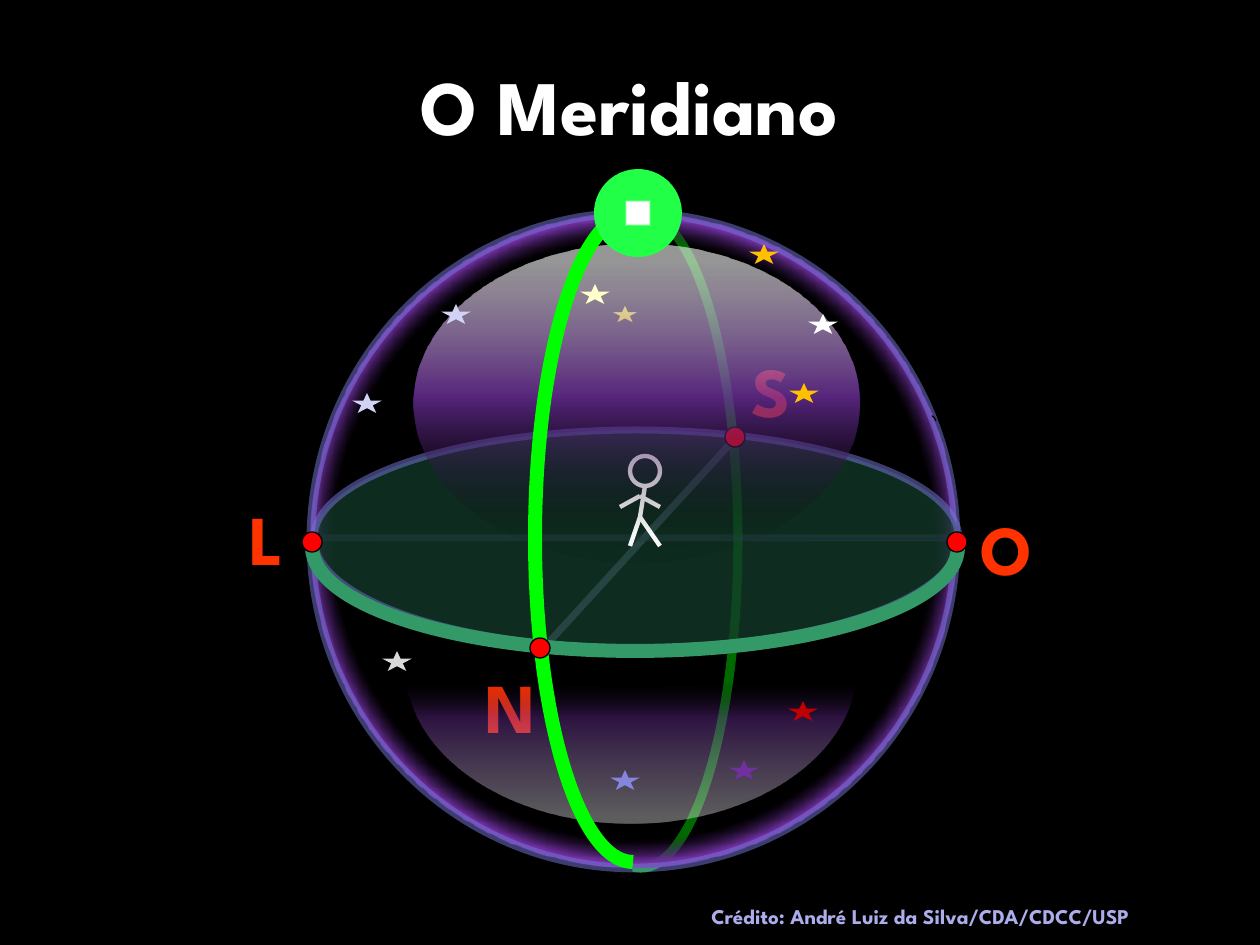
import copy
import math

import pptx
import pptx.dml.color
import pptx.enum.shapes
import pptx.enum.text
import pptx.oxml
import pptx.oxml.ns
import pptx.util

SHAPE = pptx.enum.shapes.MSO_SHAPE
qn = pptx.oxml.ns.qn
FONT = "League Spartan"
C = {"black": "000000", "white": "FFFFFF", "purple": "7030A0", "violet": "7878DE",
     "axis": "A5A5E9", "lime": "00FF00", "zenith": "21FF46", "ground": "143C2B",
     "horizon": "339966", "letter": "FF3300", "dot": "FF0000", "yellow": "FFFF00",
     "lilac": "D2D2F4", "gold": "FFC000", "cream": "FFFFCC", "crimson": "C00000",
     "blue": "8585E0", "gray": "D9D9D9", "credit": "ADADEB"}

TITLE = "O Meridiano"
CREDIT = "Crédito: André Luiz da Silva/CDA/CDCC/USP"
# letter, its corner, corner of its dot
CARDINALS = [("N", (473, 657), (530, 638)), ("L", (237, 489), (302, 532)),
             ("S", (739, 341), (725, 427)), ("O", (968, 499), (947, 532))]
LIMBS = [(645, 486, 640, 517), (640, 517, 660, 546), (640, 517, 630, 546),
         (640, 496, 660, 507), (620, 507, 640, 496)]
STARS = [(352, 393, "lilac"), (441, 304, "lilac"), (789, 383, "gold"),
         (749, 244, "gold"), (808, 314, "white"), (580, 284, "cream"),
         (729, 760, "purple"), (788, 701, "crimson"), (610, 770, "blue"),
         (382, 651, "gray")]
# Bezier outlines: start, then two handles and an end for each segment
GROUND = [(959, 538), (958, 478), (813, 430), (636, 430),
          (457, 430), (314, 479), (314, 538), (314, 599), (457, 648), (636, 648),
          (814, 648), (959, 599), (959, 539)]
FRONT_HORIZON = [(315, 536), (314, 539), (312, 543), (312, 547),
                 (312, 605), (457, 651), (635, 651), (813, 651), (958, 605), (958, 547),
                 (958, 546), (958, 544), (958, 543)]
FRONT_MERIDIAN = [(645, 214), (641, 213), (638, 213), (634, 213),
                  (580, 213), (536, 358), (536, 538), (536, 717), (580, 862), (634, 862)]
SMALL_ARC = [(936, 421), (935, 418), (934, 417), (932, 416)]
# gradient stops: position, colour, opacity
SPHERE_GLOW = [(65, "black", 40), (70, "purple", 100)]
UPPER_GLOW = [(6, "white", 58), (48, "purple", 77), (91, "black", 2)]
LOWER_GLOW = [(3, "white", 37), (68, "purple", 41), (94, "black", 0)]
ZENITH_GLOW = [(18, "white", 100), (21, "zenith", 100), (82, "zenith", 2)]


def px(n):
    return round(n * 914400 / 126)


def rgb(name):
    return pptx.dml.color.RGBColor.from_string(C[name])


def set_opacity(parent, percent):
    """Make the solid colour held by a fill's parent element translucent."""
    if percent < 100:
        color = parent.find(qn("a:solidFill"))[0]
        color.append(pptx.oxml.parse_xml(
            f'<a:alpha {pptx.oxml.ns.nsdecls("a")} val="{percent * 1000}"/>'))


def stroke(item, color, width, opacity=100):
    item.line.color.rgb = rgb(color)
    item.line.width = pptx.util.Pt(width)
    set_opacity(item.element.spPr.find(qn("a:ln")), opacity)


def style(shape, fill=None, line=None, opacity=100):
    shape.shadow.inherit = False
    if fill:
        shape.fill.solid()
        shape.fill.fore_color.rgb = rgb(fill)
        set_opacity(shape.element.spPr, opacity)
    else:
        shape.fill.background()
    if line:
        stroke(shape, *line)
    else:
        shape.line.fill.background()
    return shape


def add(kind, box, fill=None, line=None):
    return style(slide.shapes.add_shape(kind, *map(px, box)), fill, line)


def add_line(ends, *line):
    connector = slide.shapes.add_connector(
        pptx.enum.shapes.MSO_CONNECTOR.STRAIGHT, *map(px, ends))
    stroke(connector, *line)
    connector.element.spPr.append(pptx.oxml.parse_xml(
        f'<a:effectLst {pptx.oxml.ns.nsdecls("a")}/>'))


def turn(point, pivot, degrees):
    angle = math.radians(degrees)
    dx, dy = point[0] - pivot[0], point[1] - pivot[1]
    return (pivot[0] + dx * math.cos(angle) - dy * math.sin(angle),
            pivot[1] + dx * math.sin(angle) + dy * math.cos(angle))


def add_curve(outline, hub, line, fill=None, opacity=100, pivot=(0, 0), rotation=0):
    """Stroke a Bezier outline, and fill the sector it spans around its hub."""
    points = [tuple(map(px, turn(p, pivot, -rotation))) for p in [*outline, hub]]
    builder = slide.shapes.build_freeform(*points[0])
    builder.add_line_segments(points[1:], close=False)
    shape = style(builder.convert_to_shape(), fill, line, opacity)
    shape.rotation = rotation
    sector = next(shape.element.iter(qn("a:path")))
    steps = sector.findall(qn("a:lnTo"))[:-1]
    for first in range(0, len(steps), 3):
        bend = sector.makeelement(qn("a:cubicBezTo"), {})
        steps[first].addprevious(bend)
        for step in steps[first:first + 3]:
            bend.append(step[0])
            sector.remove(step)
    rim = copy.deepcopy(sector)
    rim.remove(rim[-1])
    rim.set("fill", "none")
    sector.addprevious(rim)
    sector.set("stroke", "0")
    sector.append(sector.makeelement(qn("a:close"), {}))


def set_gradient(shape, stops, shade, rotates=1):
    marks = "".join(
        f'<a:gs pos="{pos * 1000}"><a:srgbClr val="{C[color]}">'
        f'<a:alpha val="{opacity * 1000}"/></a:srgbClr></a:gs>'
        for pos, color, opacity in stops)
    gradient = pptx.oxml.parse_xml(
        f'<a:gradFill {pptx.oxml.ns.nsdecls("a")} rotWithShape="{rotates}">'
        f'<a:gsLst>{marks}</a:gsLst>{shade}</a:gradFill>')
    properties = shape.element.spPr
    properties.replace(properties.find(qn("a:noFill")), gradient)


def linear(degrees):
    return f'<a:lin ang="{degrees * 60000}" scaled="0"/>'


def radial(kind):
    return (f'<a:path path="{kind}"><a:fillToRect l="50000" t="50000" '
            'r="50000" b="50000"/></a:path>')


def write(paragraph, text, size, color):
    paragraph.text = text
    paragraph.font.name = FONT
    paragraph.font.size = pptx.util.Pt(size)
    paragraph.font.bold = True
    paragraph.font.color.rgb = rgb(color)


def add_text(box, text, size, color):
    frame = slide.shapes.add_textbox(*map(px, box)).text_frame
    frame.word_wrap = True
    frame.auto_size = pptx.enum.text.MSO_AUTO_SIZE.SHAPE_TO_FIT_TEXT
    write(frame.paragraphs[0], text, size, color)
    return frame.paragraphs[0]


def add_dot(corner):
    add(SHAPE.OVAL, (*corner, 20, 20), "dot", ("black", 0.75))


deck = pptx.Presentation()
deck.slide_width, deck.slide_height = px(1260), px(945)
slide = deck.slides.add_slide(deck.slide_layouts[5])
slide.background.fill.solid()
slide.background.fill.fore_color.rgb = rgb("black")

title = slide.shapes.title
title.left, title.top, title.width, title.height = map(px, (94, 26, 1071, 158))
title.text_frame.vertical_anchor = pptx.enum.text.MSO_ANCHOR.MIDDLE
write(title.text_frame.paragraphs[0], TITLE, 44, "white")
title.text_frame.paragraphs[0].alignment = pptx.enum.text.PP_ALIGN.CENTER

# Sphere, back of the meridian and horizon plane
add_line((541, 651, 740, 433), "axis", 4)
back_meridian = add(SHAPE.ARC, (544, 213, 194, 655), line=("lime", 5.25, 70))
back_meridian.adjustments[0], back_meridian.adjustments[1] = 162.445, 54.836
add_line((316, 538, 960, 538), "violet", 4, 50)
sphere = add(SHAPE.OVAL, (311, 213, 645, 655), line=("violet", 5, 50))
set_gradient(sphere, SPHERE_GLOW, radial("circle"))
add_curve(GROUND, (636, 538), ("violet", 4, 50), "ground", 73)

for letter, (left, top), _ in CARDINALS:
    label = add_text((left, top, 49, 97), letter, 40, "letter")
    label._p.get_or_add_pPr().insert(0, pptx.oxml.parse_xml(
        f'<a:spcBef {pptx.oxml.ns.nsdecls("a")}><a:spcPct val="50000"/></a:spcBef>'))

add_curve(SMALL_ARC, (387, 551), ("black", 0.75), pivot=(662, 483), rotation=348.8)
add_curve(FRONT_HORIZON, (635, 547), ("horizon", 8), "ground", 7)
add(SHAPE.STAR_5_POINT, (610, 304, 30, 20), "yellow", ("black", 0.75))

# Observer
add(SHAPE.OVAL, (630, 456, 30, 30), line=("white", 2.5))
for limb in LIMBS:
    add_line(limb, "white", 2.5)
for _, _, corner in CARDINALS[1:]:
    add_dot(corner)

# Reflections on the sphere, then what lies in front of them
upper = add(SHAPE.OVAL, (413, 244, 446, 318))
set_gradient(upper, UPPER_GLOW, linear(90))
lower = add(SHAPE.MOON, (554, 520, 155, 451))
lower.rotation = 270
lower.adjustments[0] = 0.875
set_gradient(lower, LOWER_GLOW, linear(0))
add_curve(FRONT_MERIDIAN, (634, 538), ("lime", 8), pivot=(590, 538), rotation=90)
add_dot(CARDINALS[0][2])
for left, top, color in STARS:
    add(SHAPE.STAR_5_POINT, (left, top, 30, 20), color)

add_text((699, 897, 561, 38), CREDIT, 12, "credit")
zenith = add(SHAPE.OVAL, (594, 169, 88, 88))
zenith.rotation = 305.7
set_gradient(zenith, ZENITH_GLOW, radial("shape"), rotates=0)

deck.save("out.pptx")
